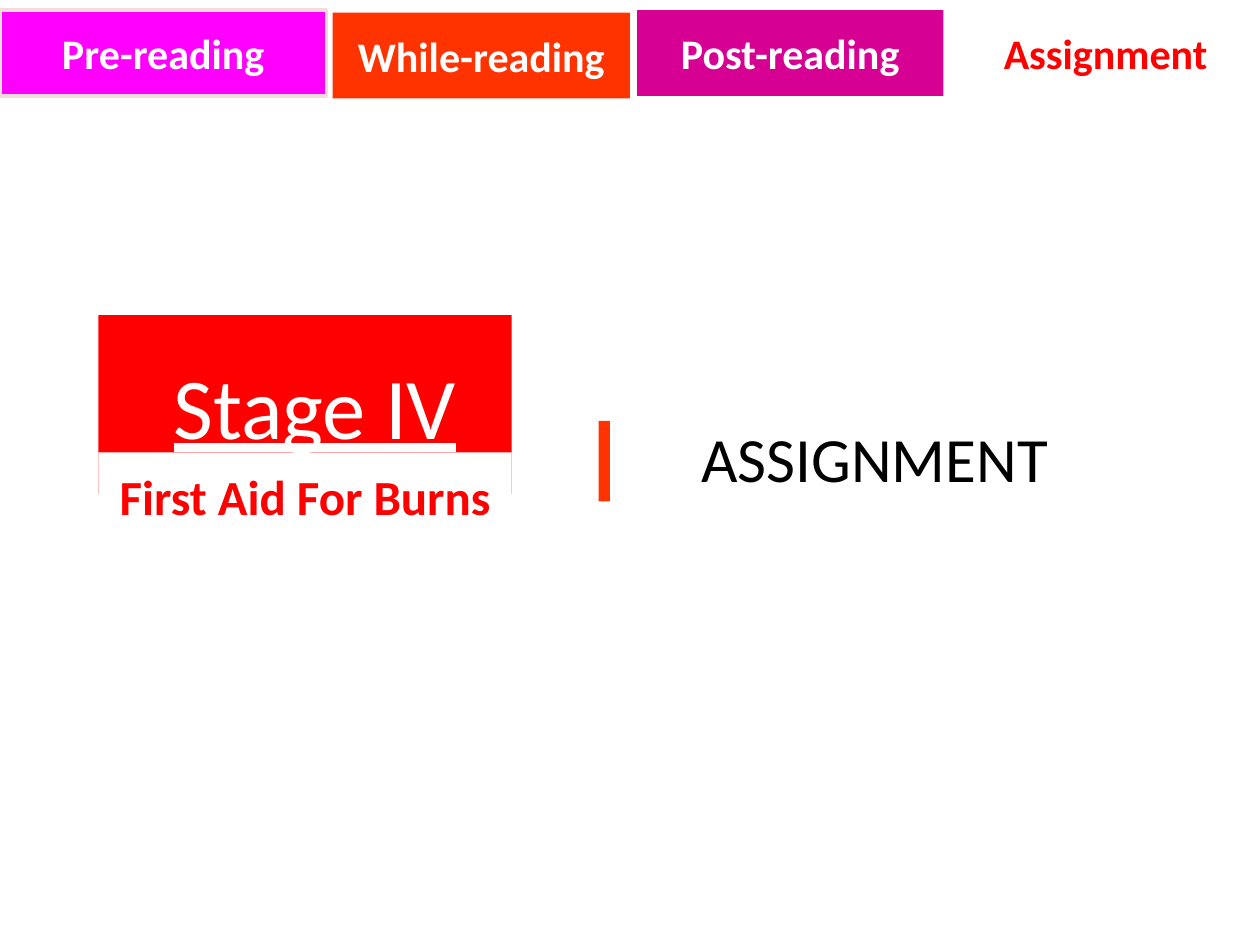
"""Build the stage-opening slide with its lesson navigation bar."""
from pptx import Presentation
from pptx.dml.color import RGBColor
from pptx.enum.shapes import MSO_SHAPE
from pptx.enum.text import MSO_ANCHOR, PP_ALIGN
from pptx.util import Pt

FONT = "Calibri"
WHITE = RGBColor(0xFF, 0xFF, 0xFF)
BLACK = RGBColor(0x00, 0x00, 0x00)
RED = RGBColor(0xFF, 0x00, 0x00)
ORANGE = RGBColor(0xFF, 0x33, 0x00)
MAGENTA = RGBColor(0xFF, 0x00, 0xFF)
PURPLE = RGBColor(0xD6, 0x00, 0x93)
PALE_PINK = RGBColor(0xF2, 0xDC, 0xDB)

TAB_HEIGHT = 49
TABS = [
    ("Pre-reading", 0, 5.8, 186.5, MAGENTA, WHITE, PALE_PINK),
    ("Assignment", 543.6, 5.8, 176.4, WHITE, RED, None),
    ("While-reading", 190.1, 7.2, 169.9, ORANGE, WHITE, None),
    ("Post-reading", 364.1, 5.8, 175, PURPLE, WHITE, None),
]


def add_run(p, text, size, color, bold=False, underline=False):
    r = p.add_run()
    r.text = text
    r.font.name = FONT
    r.font.size = Pt(size)
    r.font.color.rgb = color
    r.font.bold = bold
    r.font.underline = underline


def add_box(s, left, top, width, height, fill, line=None):
    sp = s.shapes.add_shape(MSO_SHAPE.RECTANGLE, Pt(left), Pt(top), Pt(width), Pt(height))
    sp.shadow.inherit = False
    sp.fill.solid()
    sp.fill.fore_color.rgb = fill
    if line is None:
        sp.line.fill.background()
    else:
        sp.line.color.rgb = line
        sp.line.width = Pt(2)
    return sp


def centred_paragraph(sp, anchor=MSO_ANCHOR.MIDDLE):
    tf = sp.text_frame
    tf.word_wrap = True
    tf.vertical_anchor = anchor
    p = tf.paragraphs[0]
    p.alignment = PP_ALIGN.CENTER
    return p


def add_tab(s, label, left, top, width, fill, color, line):
    sp = add_box(s, left, top, width, TAB_HEIGHT, fill, line)
    add_run(centred_paragraph(sp), label, 24, color, bold=True)


def add_heading(s, text):
    tf = s.shapes.add_textbox(Pt(393.8), Pt(236.2), Pt(326.2), Pt(46)).text_frame
    tf.word_wrap = True
    add_run(tf.paragraphs[0], text, 36, BLACK)


def add_stage_panel(s, stage, topic):
    p = centred_paragraph(add_box(s, 56.2, 180, 236.2, 102.2, RED))
    add_run(p, " ", 49.5, WHITE)
    add_run(p, stage, 49.5, WHITE, underline=True)
    add_box(s, 342, 240.5, 6.5, 46, ORANGE)
    p = centred_paragraph(add_box(s, 56.2, 258.5, 236.2, 45.4, WHITE), MSO_ANCHOR.BOTTOM)
    p.line_spacing = 1.2
    add_run(p, topic, 28, RED, bold=True)


def main():
    prs = Presentation()
    prs.slide_width, prs.slide_height = Pt(720), Pt(540)
    s = prs.slides.add_slide(prs.slide_layouts[6])
    add_heading(s, "ASSIGNMENT")
    add_stage_panel(s, "Stage IV", "First Aid For Burns")
    for tab in TABS:
        add_tab(s, *tab)
    prs.save("out.pptx")


if __name__ == "__main__":
    main()
